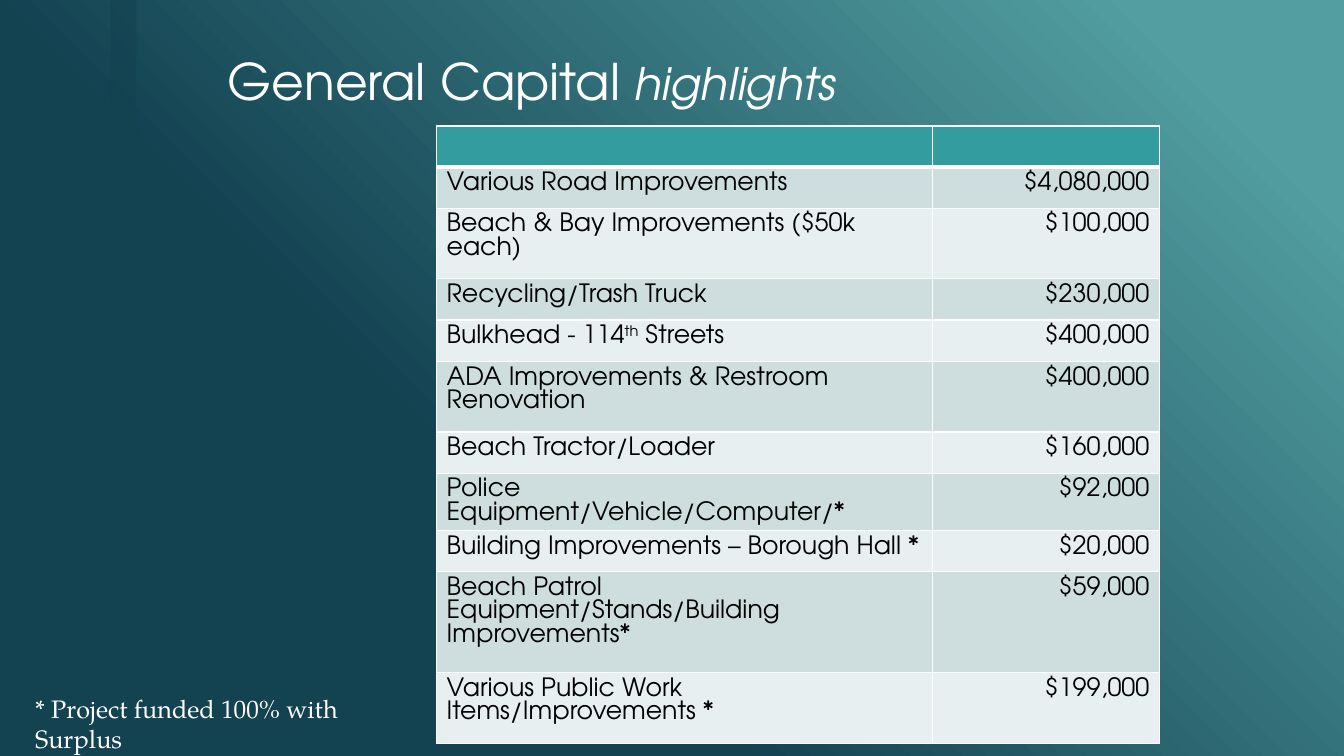
"""Build the General Capital highlights slide."""
from dataclasses import dataclass

from lxml.etree import SubElement
from pptx import Presentation
from pptx.dml.color import RGBColor
from pptx.enum.shapes import MSO_SHAPE
from pptx.enum.text import MSO_ANCHOR, MSO_AUTO_SIZE, PP_ALIGN
from pptx.oxml import parse_xml
from pptx.oxml.ns import nsdecls, qn
from pptx.util import Inches, Pt

COLORS = {
    "light": "529EA1", "dark": "134251", "head": "339C9F",
    "odd": "CEDEDF", "even": "E8EFF0", "white": "FFFFFF", "black": "000000",
}
SANS = "TeX Gyre Adventor"
SERIF = "TeX Gyre Pagella"


@dataclass
class Item:
    """One table row; every second text of the label is raised."""
    texts: tuple[str, ...]
    cost: str
    height: float = 0.41


@dataclass
class Label:
    """One text box with its runs as (text, size, italic)."""
    box: tuple[float, float, float, float]
    runs: tuple[tuple[str, int, bool], ...]
    face: str
    anchor: MSO_ANCHOR = MSO_ANCHOR.TOP
    space: float = 1.0
    fit: MSO_AUTO_SIZE = MSO_AUTO_SIZE.NONE


ITEMS = [
    Item(("Various Road Improvements",), "$4,080,000"),
    Item(("Beach & Bay Improvements ($50k each)",), "$100,000", 0.7),
    Item(("Recycling/Trash Truck",), "$230,000"),
    Item(("Bulkhead - 114", "th", " Streets"), "$400,000"),
    Item(("ADA Improvements & Restroom Renovation",), "$400,000", 0.7),
    Item(("Beach Tractor/Loader",), "$160,000"),
    Item(("Police Equipment/Vehicle/Computer/*",), "$92,000"),
    Item(("Building Improvements – Borough Hall *",), "$20,000"),
    Item(("Beach Patrol Equipment/Stands/Building Improvements*",), "$59,000", 1),
    Item(("Various Public Work Items/Improvements *",), "$199,000", 0.7),
]
LABELS = [
    Label((2.16, 0.25, 9, 0.9),
          (("General Capital ", 36, False), ("highlights", 32, True)),
          SANS, MSO_ANCHOR.BOTTOM, 0.9),
    Label((0.25, 6.83, 4.03, 0.4),
          (("* Project funded 100% with Surplus", 18, False),),
          SERIF, fit=MSO_AUTO_SIZE.SHAPE_TO_FIT_TEXT),
]


def tint(name: str) -> RGBColor:
    """Return a named colour."""
    return RGBColor.from_string(COLORS[name])


def style(run, face: str, size: int, color: str) -> None:
    """Set the font of a run."""
    run.font.name = face
    run.font.size = Pt(size)
    run.font.color.rgb = tint(color)


def paint(slide) -> None:
    """Fill the background and draw the side bar."""
    fill = slide.background.fill
    fill.gradient()
    grad = slide.element.find(".//" + qn("a:gradFill"))
    stops = ((10, "light"), (65, "dark"), (100, "dark"))
    marks = "".join(
        f'<a:gs pos="{pos * 1000}"><a:srgbClr val="{COLORS[name]}"/></a:gs>'
        for pos, name in stops)
    grad.getparent().replace(grad, parse_xml(
        f'<a:gradFill {nsdecls("a")} rotWithShape="1"><a:gsLst>{marks}</a:gsLst>'
        f'<a:lin ang="{135 * 60000}" scaled="0"/></a:gradFill>'))
    bar = slide.shapes.add_shape(
        MSO_SHAPE.RECTANGLE, Inches(1.1), Inches(0), Inches(0.25), Inches(7.5))
    bar.shadow.inherit = False
    bar.line.fill.background()
    bar.fill.solid()
    bar.fill.fore_color.rgb = tint("dark")
    shade = bar.element.spPr.find(".//" + qn("a:srgbClr"))
    SubElement(shade, qn("a:alpha"), val="60000")


def write(slide, label: Label) -> None:
    """Add a text box."""
    box = slide.shapes.add_textbox(*map(Inches, label.box))
    frame = box.text_frame
    frame.word_wrap = True
    frame.auto_size = label.fit
    frame.vertical_anchor = label.anchor
    para = frame.paragraphs[0]
    para.line_spacing = label.space
    for text, size, slant in label.runs:
        run = para.add_run()
        run.text = text
        style(run, label.face, size, "white")
        run.font.italic = slant


def dress(cell, color: str, row: int) -> None:
    """Give a cell its borders and fill."""
    props = cell._tc.get_or_add_tcPr()
    for side in "LRTB":
        thick = (row, side) in ((0, "B"), (1, "T"))
        line = SubElement(props, qn(f"a:ln{side}"), w=str(Pt(3 if thick else 1)))
        solid = SubElement(line, qn("a:solidFill"))
        SubElement(solid, qn("a:srgbClr"), val=COLORS["white"])
    cell.fill.solid()
    cell.fill.fore_color.rgb = tint(color)


def tell(cell, texts: tuple[str, ...], align: PP_ALIGN) -> None:
    """Write the texts of a cell."""
    para = cell.text_frame.paragraphs[0]
    para.alignment = align
    for spot, text in enumerate(texts):
        run = para.add_run()
        run.text = text
        style(run, SANS, 18, "black")
        if spot % 2:
            run.font._element.set("baseline", "30000")


def list_costs(slide) -> None:
    """Add the table of projects and costs."""
    table = slide.shapes.add_table(
        len(ITEMS) + 1, 2, Inches(4.33), Inches(1.25),
        Inches(7.17), Inches(5.93)).table
    for col, width in zip(table.columns, (4.92, 2.25)):
        col.width = Inches(width)
    table.rows[0].height = Inches(0.4)
    for cell in table.rows[0].cells:
        dress(cell, "head", 0)
    for row, item in enumerate(ITEMS, 1):
        table.rows[row].height = Inches(item.height)
        name, cost = table.rows[row].cells
        for cell in (name, cost):
            dress(cell, "odd" if row % 2 else "even", row)
        tell(name, item.texts, PP_ALIGN.LEFT)
        tell(cost, (item.cost,), PP_ALIGN.RIGHT)


def main() -> None:
    """Build and save the slide."""
    deck = Presentation()
    deck.slide_width = Inches(13.33)
    deck.slide_height = Inches(7.5)
    slide = deck.slides.add_slide(deck.slide_layouts[6])
    paint(slide)
    list_costs(slide)
    for label in LABELS:
        write(slide, label)
    deck.save("out.pptx")


if __name__ == "__main__":
    main()
